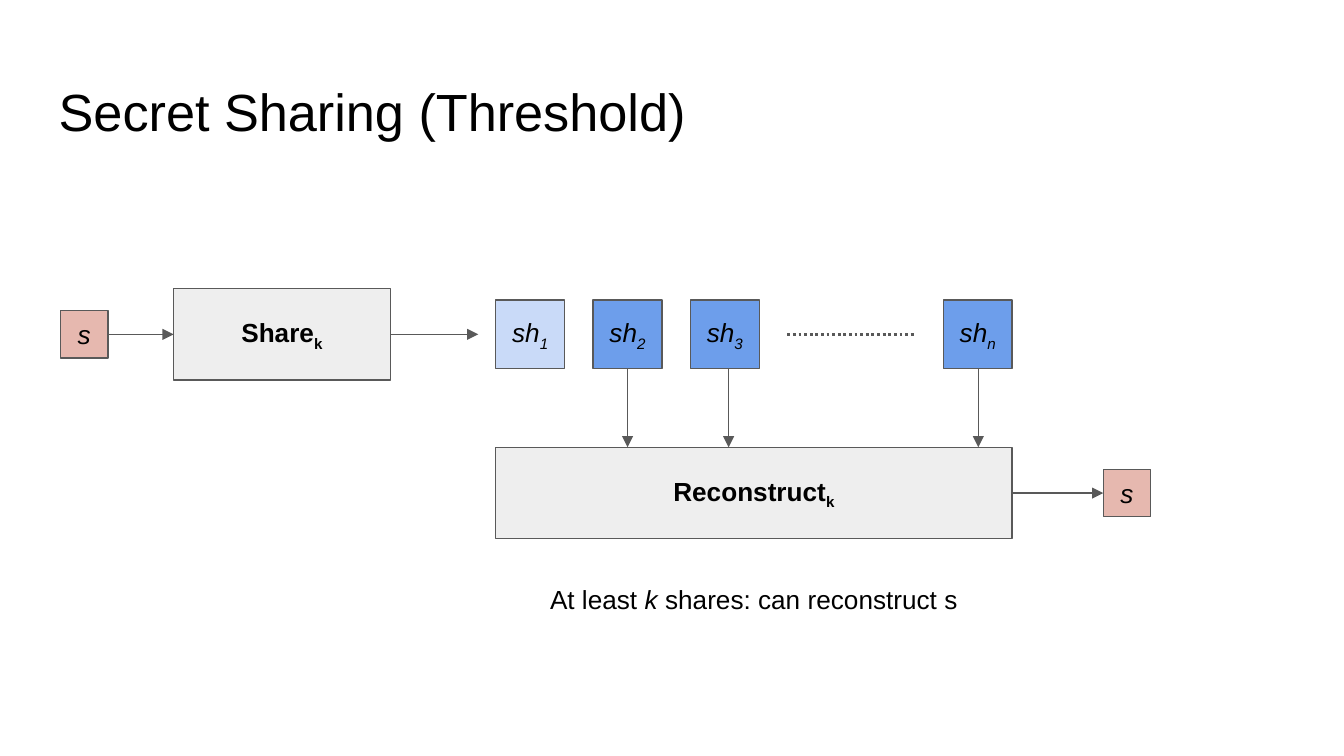
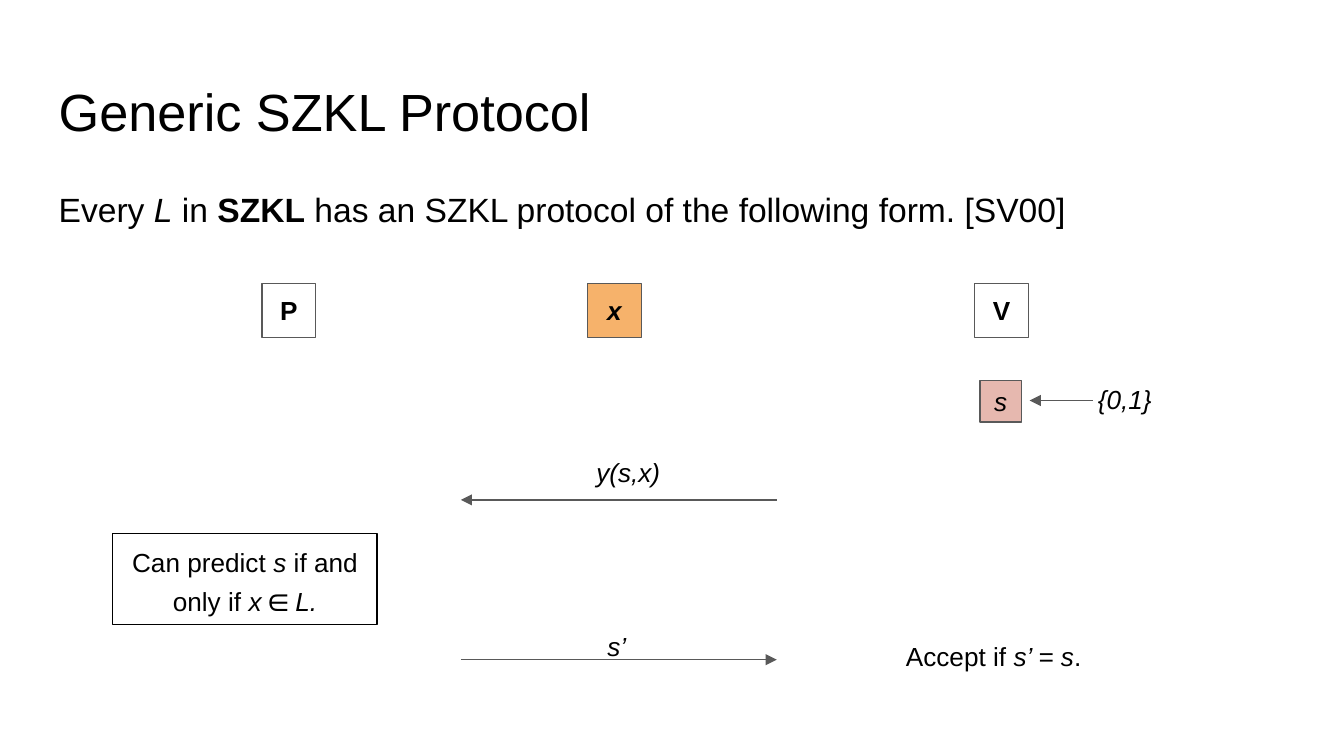
"""Build two slides on secret sharing and a generic SZKL protocol."""
from lxml import etree
from pptx import Presentation
from pptx import util as u
from pptx.dml.color import RGBColor
from pptx.enum import dml, shapes, text
from pptx.oxml import ns

COLORS = {
    "black": "000000", "edge": "595959", "process": "EEEEEE", "secret": "E6B8AF",
    "unused": "C9DAF8", "share": "6D9EEB", "input": "F6B26B",
}
FONT = "Arial"
BODY_SIZE = 14
TITLE_FRAME = (0.86, 1.24, 23.67, 1.6)
SECRET = [("s", "i")]

SHARE_ROW, RECONSTRUCT_ROW = 6.32, 9.32
PROCESS_HEIGHT, SECRET_SIZE, SHARE_SIZE = 1.73, 0.9, 1.3
SHARES_LEFT, SHARE_STEP, LAST_SHARE_LEFT = 9.37, 1.84, 17.83
SHARES = [("1", 0, "unused"), ("2", 1, "share"), ("3", 2, "share")]
SHARES_WIDTH = LAST_SHARE_LEFT + SHARE_SIZE - SHARES_LEFT
PROCESSES = [
    ("Share", 3.28, SHARE_ROW, 4.1),
    ("Reconstruct", SHARES_LEFT, RECONSTRUCT_ROW, SHARES_WIDTH),
]
SECRETS = [(1.14, SHARE_ROW), (20.85, RECONSTRUCT_ROW)]
FLOWS = [(2.04, 3.28, SHARE_ROW), (7.38, 9.04, SHARE_ROW), (19.13, 20.85, RECONSTRUCT_ROW)]
SHARE_DROPS = [11.86, 13.77, 18.49]
RECONSTRUCT_NOTE = [("At least ", ""), ("k", "i"), (" shares: can reconstruct s", "")]

CLAIM = [
    ("Every ", ""), ("L", "i"), (" in ", ""), ("SZKL", "b"),
    (" has an SZKL protocol of the following form. [SV00]", ""),
]
PARTY_TOP, PARTY_SIZE = 5.36, 1.02
PARTIES = [("P", "b", 4.95, None), ("x", "bi", 11.1, "input"), ("V", "b", 18.42, None)]
PREDICTION = [
    ("Can predict ", ""), ("s", "i"), (" if and only if ", ""),
    ("x", "i"), ("∈", "iL"), ("L.", "i"),
]
MESSAGES = [
    ((14.68, 9.45), (8.71, 9.45)),
    ((8.71, 12.47), (14.68, 12.47)),
    ((20.65, 7.57), (19.46, 7.57)),
]
LABELS = [
    ([("s’", "i")], (11.23, 11.66, 0.94, 1.22)),
    ([("Accept if ", ""), ("s’ = s", "i"), (".", "")], (16.87, 11.86, 4.11, 1.22)),
    ([("y(s,x)", "i")], (11.02, 8.38, 4.85, 1.22)),
    ([("{0,1}", "i")], (20.5, 6.99, 1.96, 1.6)),
]


def rgb(name):
    return RGBColor.from_string(COLORS[name])


def write(shape, spans, size=BODY_SIZE, align="LEFT", anchor="TOP"):
    """Fill a shape with spans; styles are b bold, i italic, s subscript, L large."""
    frame = shape.text_frame
    frame.word_wrap = True
    frame.auto_size = text.MSO_AUTO_SIZE.NONE
    frame.vertical_anchor = getattr(text.MSO_ANCHOR, anchor)
    for side in ("left", "top", "right", "bottom"):
        setattr(frame, f"margin_{side}", u.Cm(0.25))
    para = frame.paragraphs[0]
    para.alignment = getattr(text.PP_ALIGN, align)
    for words, style in spans:
        span = para.add_run()
        span.text = words
        span.font.name = FONT
        span.font.size = u.Pt(18 if "L" in style else size)
        span.font.color.rgb = rgb("black")
        span.font.bold = "b" in style
        span.font.italic = "i" in style
        if "s" in style:
            span.font._element.set("baseline", "-25000")
    return para


def add_label(page, spans, frame, **look):
    box = page.shapes.add_textbox(*map(u.Cm, frame))
    return write(box, spans, **look)


def add_box(page, spans, frame, fill=None, edge="edge", anchor="MIDDLE"):
    box = page.shapes.add_shape(shapes.MSO_SHAPE.RECTANGLE, *map(u.Cm, frame))
    box.shadow.inherit = False
    if fill:
        box.fill.solid()
        box.fill.fore_color.rgb = rgb(fill)
    else:
        box.fill.background()
    box.line.color.rgb = rgb(edge)
    box.line.width = u.Pt(0.75)
    write(box, spans, align="CENTER", anchor=anchor)


def add_line(page, start, end, dotted=False):
    line = page.shapes.add_connector(shapes.MSO_CONNECTOR.STRAIGHT, *map(u.Cm, start + end))
    line.line.color.rgb = rgb("edge")
    line.line.width = u.Pt(1.5 if dotted else 0.75)
    if dotted:
        line.line.dash_style = dml.MSO_LINE.ROUND_DOT
    else:
        etree.SubElement(line.line._get_or_add_ln(), ns.qn("a:tailEnd"), type="triangle")
    etree.SubElement(line._element.spPr, ns.qn("a:effectLst"))


def add_page(deck, title):
    page = deck.slides.add_slide(deck.slide_layouts[5])
    holder = page.shapes.title
    holder.left, holder.top, holder.width, holder.height = map(u.Cm, TITLE_FRAME)
    write(holder, [(title, "")], size=28)
    return page


def build_sharing(deck):
    page = add_page(deck, "Secret Sharing (Threshold)")
    for name, left, row, width in PROCESSES:
        frame = (left, row - PROCESS_HEIGHT / 2, width, PROCESS_HEIGHT)
        add_box(page, [(name, "b"), ("k", "bs")], frame, "process")
    for left, row in SECRETS:
        add_box(page, SECRET, (left, row - SECRET_SIZE / 2, SECRET_SIZE, SECRET_SIZE), "secret")
    places = [(mark, SHARES_LEFT + slot * SHARE_STEP, fill) for mark, slot, fill in SHARES]
    for mark, left, fill in places + [("n", LAST_SHARE_LEFT, "share")]:
        frame = (left, SHARE_ROW - SHARE_SIZE / 2, SHARE_SIZE, SHARE_SIZE)
        add_box(page, [("sh", "i"), (mark, "is")], frame, fill)
    add_line(page, (14.88, SHARE_ROW), (17.3, SHARE_ROW), dotted=True)
    for start, end, row in FLOWS:
        add_line(page, (start, row), (end, row))
    for x in SHARE_DROPS:
        top = SHARE_ROW + SHARE_SIZE / 2
        add_line(page, (x, top), (x, RECONSTRUCT_ROW - PROCESS_HEIGHT / 2))
    add_label(page, RECONSTRUCT_NOTE, (SHARES_LEFT, 10.77, SHARES_WIDTH, 2.21), align="CENTER")


def build_protocol(deck):
    page = add_page(deck, "Generic SZKL Protocol")
    claim = add_label(page, CLAIM, (0.86, 3.2, 23.67, 9.5), size=18)
    claim.line_spacing = 1.15
    claim.space_after = u.Pt(16)
    for name, style, left, fill in PARTIES:
        add_box(page, [(name, style)], (left, PARTY_TOP, PARTY_SIZE, PARTY_SIZE), fill)
    add_box(page, SECRET, (18.52, 7.19, 0.79, 0.79), "secret")
    add_box(page, PREDICTION, (2.13, 10.08, 5.0, 1.73), edge="black", anchor="TOP")
    for start, end in MESSAGES:
        add_line(page, start, end)
    for spans, frame in LABELS:
        add_label(page, spans, frame)


def main():
    deck = Presentation()
    deck.slide_width, deck.slide_height = u.Cm(25.4), u.Cm(14.29)
    build_sharing(deck)
    build_protocol(deck)
    deck.save("out.pptx")


if __name__ == "__main__":
    main()
